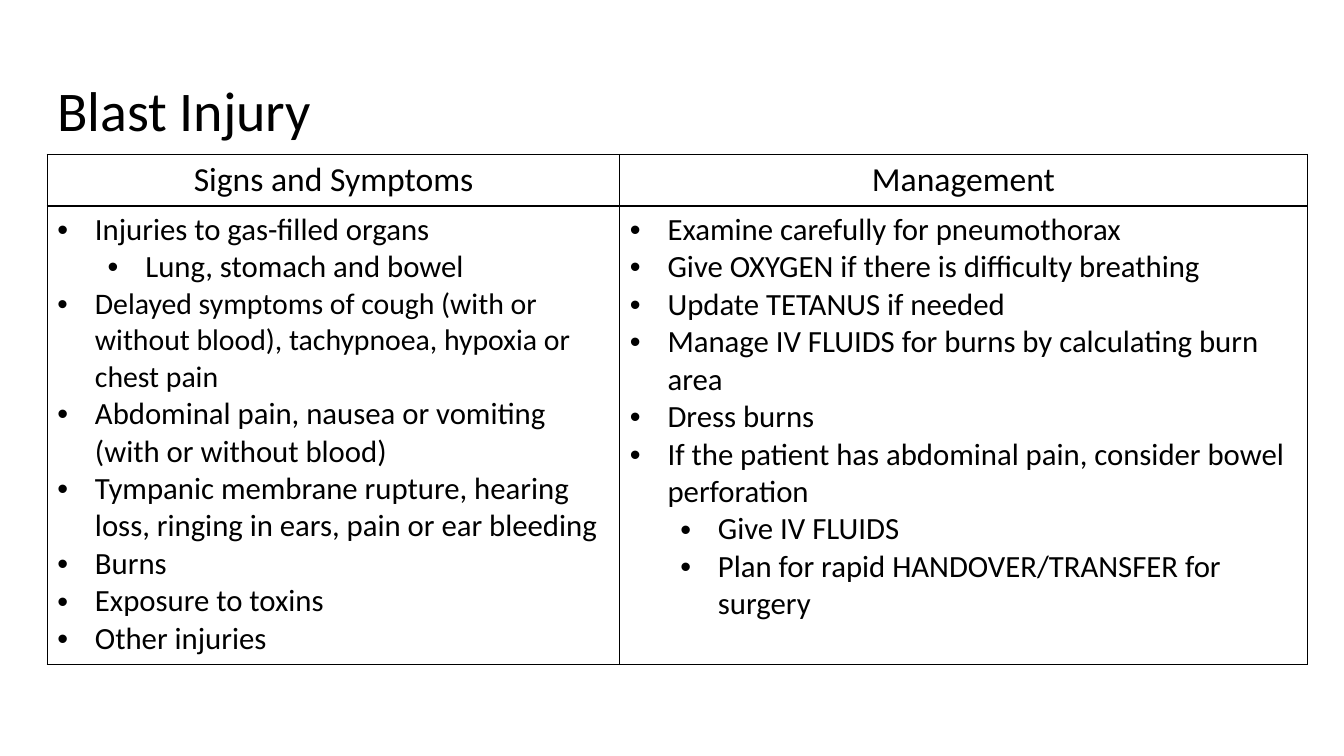
from lxml.etree import SubElement
from pptx import Presentation
from pptx.dml.color import RGBColor
from pptx.enum.text import MSO_ANCHOR as Anchor, PP_ALIGN as Align
from pptx.oxml.ns import qn
from pptx.util import Cm, Pt

COLOURS = {"ink": "000000"}
FONT = "Calibri"
BODY_SIZE = 22
COLUMN_WIDTHS = (14.43, 17.32)
ROW_HEIGHTS = (1.3, 11.56)
HEADINGS = ("Signs and Symptoms", "Management")
SIGNS = (
    (0, "Injuries to gas-filled organs", BODY_SIZE),
    (1, "Lung, stomach and bowel", BODY_SIZE),
    (0, "Delayed symptoms of cough (with or without blood), "
        "tachypnoea, hypoxia or chest pain", 21.3),
    (0, "Abdominal pain, nausea or vomiting (with or without blood)", BODY_SIZE),
    (0, "Tympanic membrane rupture, hearing loss, ringing in ears, "
        "pain or ear bleeding", BODY_SIZE),
    (0, "Burns", BODY_SIZE),
    (0, "Exposure to toxins", BODY_SIZE),
    (0, "Other injuries", BODY_SIZE),
)
MANAGEMENT = (
    (0, "Examine carefully for pneumothorax", BODY_SIZE),
    (0, "Give OXYGEN if there is difficulty breathing", BODY_SIZE),
    (0, "Update TETANUS if needed", BODY_SIZE),
    (0, "Manage IV FLUIDS for burns by calculating burn area", BODY_SIZE),
    (0, "Dress burns", BODY_SIZE),
    (0, "If the patient has abdominal pain, consider bowel perforation", BODY_SIZE),
    (1, "Give IV FLUIDS", BODY_SIZE),
    (1, "Plan for rapid HANDOVER/TRANSFER for surgery", BODY_SIZE),
)


def add_span(para, text, size):
    span = para.add_run()
    span.text = text
    span.font.name = FONT
    span.font.size = Pt(size)
    span.font.bold = False
    span.font.color.rgb = RGBColor.from_string(COLOURS["ink"])


def add_title(page, text):
    box = page.shapes.add_textbox(Cm(1.19), Cm(1.02), Cm(31.5), Cm(3.68))
    frame = box.text_frame
    frame.word_wrap = True
    frame.vertical_anchor = Anchor.MIDDLE
    para = frame.paragraphs[0]
    para.line_spacing = 0.9
    add_span(para, text, 40)


def style_cell(cell):
    properties = cell._tc.get_or_add_tcPr()
    for side in ("a:lnL", "a:lnR", "a:lnT", "a:lnB"):
        line = SubElement(properties, qn(side), w=str(Pt(1)))
        fill = SubElement(line, qn("a:solidFill"))
        SubElement(fill, qn("a:srgbClr"), val=COLOURS["ink"])
    cell.fill.background()


def fill_heading(cell, text):
    para = cell.text_frame.paragraphs[0]
    para.alignment = Align.CENTER
    add_span(para, text, 24)


def fill_bullets(cell, items):
    frame = cell.text_frame
    for index, (level, text, size) in enumerate(items):
        para = frame.add_paragraph() if index else frame.paragraphs[0]
        para.level = level
        properties = para._p.get_or_add_pPr()
        properties.set("marL", str(Cm(0.95 + 1.27 * level)))
        properties.set("indent", str(-Cm(0.95)))
        SubElement(properties, qn("a:buFont"), typeface="Arial")
        SubElement(properties, qn("a:buChar"), char="•")
        add_span(para, text, size)


def add_care_table(page):
    frame = page.shapes.add_table(
        2, 2, Cm(1.19), Cm(3.89), Cm(sum(COLUMN_WIDTHS)), Cm(sum(ROW_HEIGHTS)))
    table = frame.table
    table.first_row = False
    table.horz_banding = False
    for column, width in zip(table.columns, COLUMN_WIDTHS):
        column.width = Cm(width)
    for row, height in zip(table.rows, ROW_HEIGHTS):
        row.height = Cm(height)
    for cell in table.iter_cells():
        style_cell(cell)
    for index, (heading, items) in enumerate(zip(HEADINGS, (SIGNS, MANAGEMENT))):
        fill_heading(table.cell(0, index), heading)
        fill_bullets(table.cell(1, index), items)


def main():
    deck = Presentation()
    deck.slide_width = Cm(33.87)
    deck.slide_height = Cm(19.05)
    page = deck.slides.add_slide(deck.slide_layouts[6])
    add_title(page, "Blast Injury")
    add_care_table(page)
    deck.save("out.pptx")


if __name__ == "__main__":
    main()
